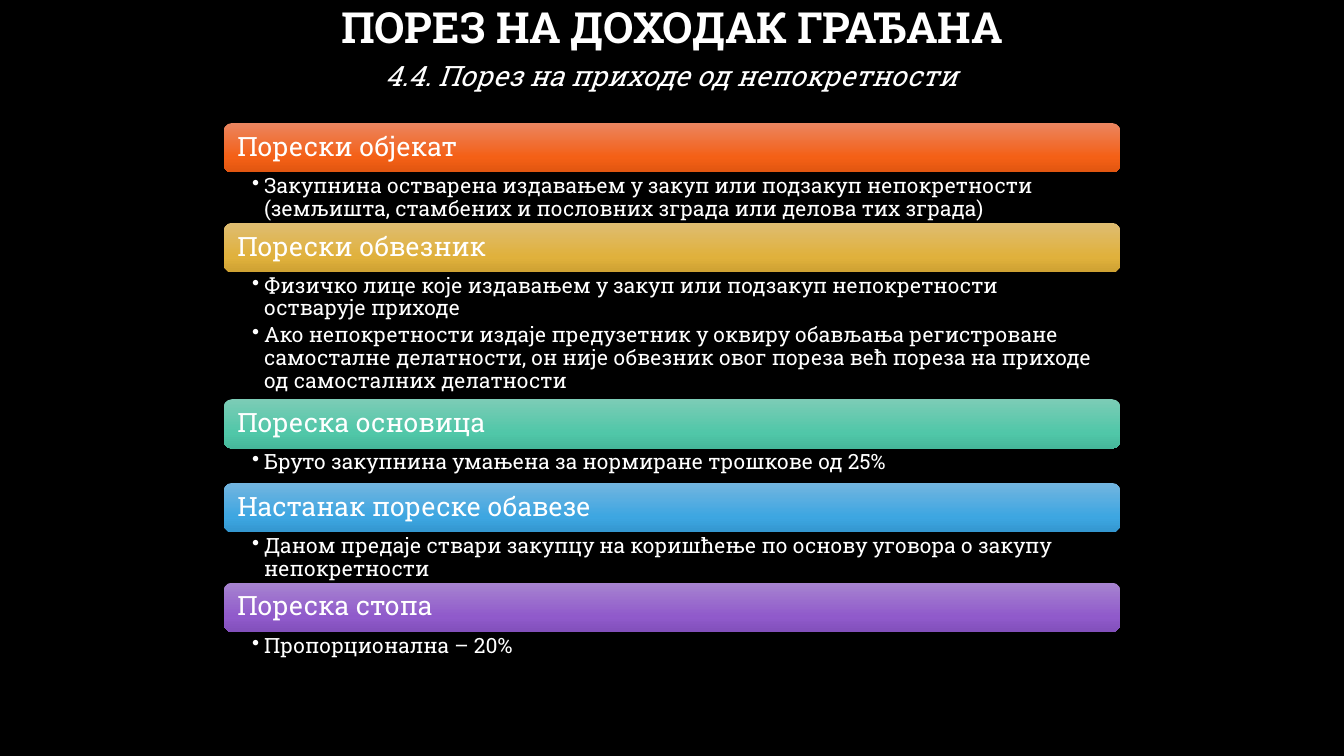
from copy import deepcopy
from dataclasses import dataclass

from pptx import Presentation
from pptx.dml.color import RGBColor
from pptx.enum.shapes import MSO_SHAPE as Shape
from pptx.enum.text import MSO_ANCHOR as Anchor, MSO_AUTO_SIZE as AutoSize, PP_ALIGN as Align
from pptx.oxml.ns import qn
from pptx.oxml.xmlchemy import OxmlElement
from pptx.util import Inches, Pt


@dataclass(frozen=True)
class Theme:
    font: str = "Roboto Slab"
    background: str = "000000"
    text: str = "FFFFFF"
    title_size: float = 30.6
    subtitle_size: float = 20
    heading_size: float = 19
    detail_size: float = 15
    orange: tuple = ("EB8560", "F46016", "E15610")
    gold: tuple = ("DFBD72", "E0B13C", "CFA233")
    green: tuple = ("7CCCB6", "50C7A8", "46B79A")
    blue: tuple = ("73B5E0", "3DA6E1", "3497D0")
    purple: tuple = ("A784D0", "905ACB", "8250BB")
    gradient_positions: tuple = (0, 0.69, 1)


THEME = Theme()
LEFT, WIDTH, FIRST_TOP, HEADING_HEIGHT = 2.22, 8.89, 1.22, 0.49
SECTIONS = [
    ("Порески објекат", THEME.orange, 0.5, [
        "Закупнина остварена издавањем у закуп или подзакуп непокретности "
        "(земљишта, стамбених и пословних зграда или делова тих зграда)"]),
    ("Порески обвезник", THEME.gold, 1.26, [
        "Физичко лице које издавањем у закуп или подзакуп непокретности остварује приходе",
        "Ако непокретности издаје предузетник у оквиру обављања регистроване самосталне "
        "делатности, он није обвезник овог пореза већ пореза на приходе од самосталних "
        "делатности"]),
    ("Пореска основица", THEME.green, 0.34, [
        "Бруто закупнина умањена за нормиране трошкове од 25%"]),
    ("Настанак пореске обавезе", THEME.blue, 0.5, [
        "Даном предаје ствари закупцу на коришћење по основу уговора о закупу непокретности"]),
    ("Пореска стопа", THEME.purple, 0.34, ["Пропорционална – 20%"]),
]


class SlideBuilder:
    """Draws themed elements on one slide."""

    def __init__(self, page, theme):
        self.page, self.theme = page, theme
        fill = page.background.fill
        fill.solid()
        fill.fore_color.rgb = RGBColor.from_string(theme.background)

    def add_text(self, para, text, size, bold=False, italic=False, spacing=0.9, align=Align.LEFT):
        para.alignment, para.line_spacing = align, spacing
        span = para.add_run()
        span.text = text
        font = span.font
        font.name, font.size, font.bold, font.italic = self.theme.font, Pt(size), bold, italic
        font.color.rgb = RGBColor.from_string(self.theme.text)

    def set_bullet(self, para, character=None, indent=0):
        properties = para._p.get_or_add_pPr()
        properties.set("marL", str(Inches(indent)))
        properties.set("indent", str(-Inches(indent)))
        bullet = OxmlElement("a:buChar" if character else "a:buNone")
        if character:
            bullet.set("char", character)
        properties.append(bullet)

    def set_frame(self, frame, anchor, margins):
        frame.word_wrap, frame.auto_size, frame.vertical_anchor = True, AutoSize.NONE, anchor
        (frame.margin_left, frame.margin_top,
         frame.margin_right, frame.margin_bottom) = map(Inches, margins)

    def placeholder(self, box, top, height, anchor, text, size, **style):
        box.left, box.top, box.width, box.height = map(Inches, (1, top, 11.32, height))
        self.set_frame(box.text_frame, anchor, (0.1, 0.05, 0.1, 0.05))
        para = box.text_frame.paragraphs[0]
        self.add_text(para, text, size, align=Align.CENTER, **style)
        return para

    def title(self, text):
        self.placeholder(self.page.shapes.title, 0.12, 0.34, Anchor.MIDDLE, text,
                         self.theme.title_size, bold=True)

    def subtitle(self, text):
        para = self.placeholder(self.page.placeholders[1], 0.46, 5.87, Anchor.TOP, text,
                                self.theme.subtitle_size, italic=True, spacing=1.2)
        para.space_before = Pt(10)
        self.set_bullet(para)

    def heading(self, top, text, colors):
        box = self.page.shapes.add_shape(
            Shape.ROUNDED_RECTANGLE, *map(Inches, (LEFT, top, WIDTH, HEADING_HEIGHT)))
        box.shadow.inherit = False
        box.line.fill.background()
        box.fill.gradient()
        box.fill.gradient_angle = 270
        stop_list = box._element.spPr.find(qn("a:gradFill")).find(qn("a:gsLst"))
        stop_list.append(deepcopy(stop_list[-1]))
        for stop, position, color in zip(
                box.fill.gradient_stops, self.theme.gradient_positions, colors):
            stop.position = position
            stop.color.rgb = RGBColor.from_string(color)
        self.set_frame(box.text_frame, Anchor.MIDDLE, (0.11, 0.08, 0.11, 0.08))
        self.add_text(box.text_frame.paragraphs[0], text, self.theme.heading_size)

    def details(self, top, height, items):
        box = self.page.shapes.add_textbox(*map(Inches, (LEFT, top, WIDTH, height)))
        frame = box.text_frame
        self.set_frame(frame, Anchor.TOP, (0.28, 0.03, 0.15, 0.03))
        for index, item in enumerate(items):
            para = frame.add_paragraph() if index else frame.paragraphs[0]
            self.add_text(para, item, self.theme.detail_size)
            para.space_after = Pt(3)
            self.set_bullet(para, "•", 0.12)


def main():
    deck = Presentation()
    deck.slide_width, deck.slide_height = Inches(13.33), Inches(7.5)
    builder = SlideBuilder(deck.slides.add_slide(deck.slide_layouts[1]), THEME)
    builder.title("ПОРЕЗ НА ДОХОДАК ГРАЂАНА")
    builder.subtitle("4.4. Порез на приходе од непокретности")
    top = FIRST_TOP
    for heading, colors, height, items in SECTIONS:
        builder.heading(top, heading, colors)
        builder.details(top + HEADING_HEIGHT, height, items)
        top += HEADING_HEIGHT + height
    deck.save("out.pptx")


if __name__ == "__main__":
    main()
